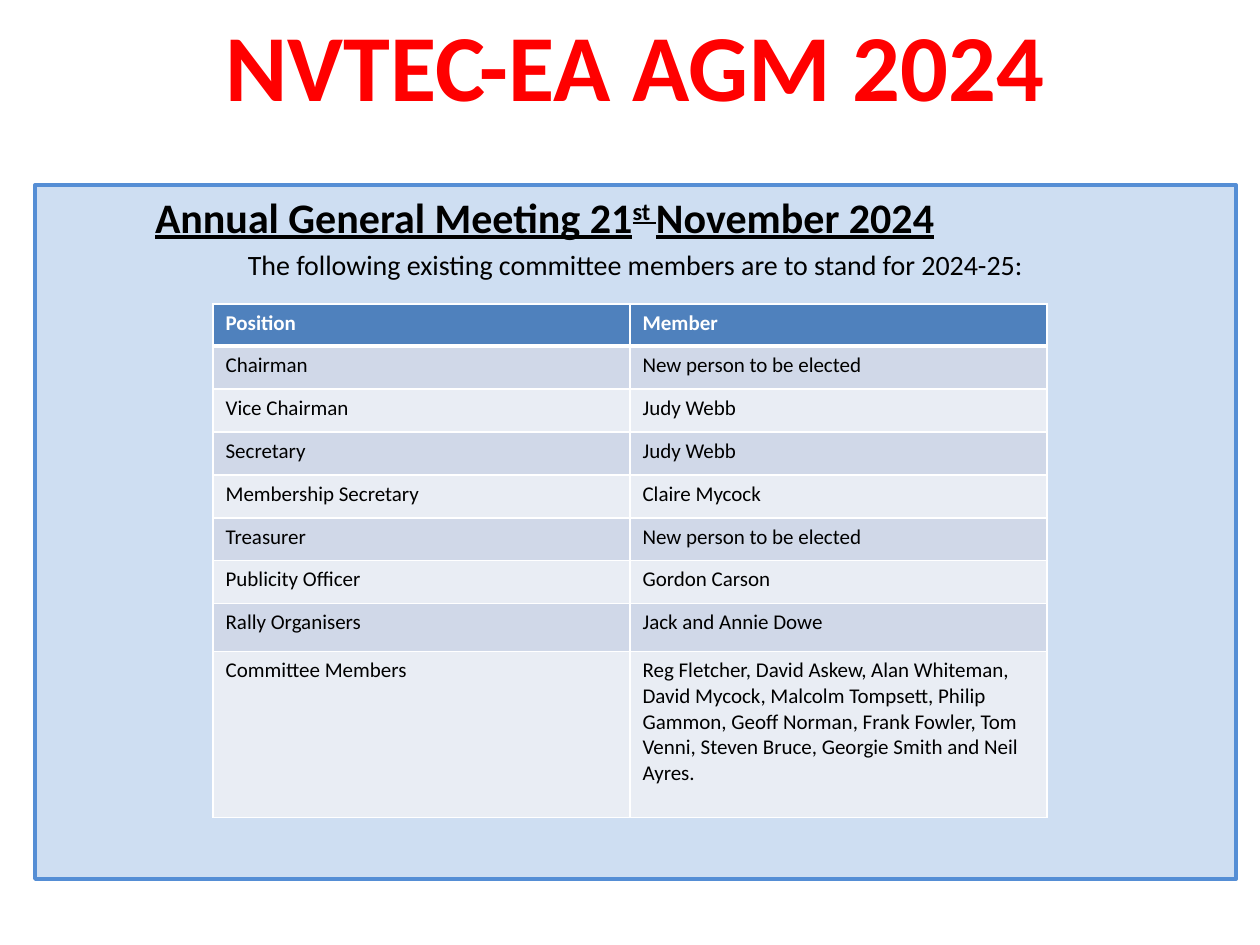
from dataclasses import dataclass
from lxml.etree import SubElement
from pptx import Presentation
from pptx.dml.color import RGBColor
from pptx.enum.shapes import MSO_SHAPE
from pptx.enum.text import MSO_ANCHOR, PP_ALIGN
from pptx.oxml.ns import qn
from pptx.util import Emu, Pt

SCALE = 914400 / 126
BLUE, BAND, PALE, WHITE = "4F81BD", "D0D8E8", "E9EDF4", "FFFFFF"
HEAD = {"size": Pt(24), "bold": True, "underline": True}


@dataclass
class Box:
    left: int
    top: int
    width: int
    height: int

    def emu(self) -> list[Emu]:
        return [px(n) for n in (self.left, self.top, self.width, self.height)]


@dataclass
class Post:
    role: str
    member: str
    height: int = 43


POSTS = [
    Post("Position", "Member", 42),
    Post("Chairman", "New person to be elected"),
    Post("Vice Chairman", "Judy Webb"),
    Post("Secretary", "Judy Webb"),
    Post("Membership Secretary", "Claire Mycock"),
    Post("Treasurer", "New person to be elected"),
    Post("Publicity Officer", "Gordon Carson"),
    Post("Rally Organisers", "Jack and Annie Dowe", 48),
    Post("Committee Members", "Reg Fletcher, David Askew, Alan Whiteman, "
         "David Mycock, Malcolm Tompsett, Philip Gammon, Geoff Norman, "
         "Frank Fowler, Tom Venni, Steven Bruce, Georgie Smith and Neil "
         "Ayres.", 166),
]


def px(n: int) -> Emu:
    return Emu(round(n * SCALE))


def rgb(code: str) -> RGBColor:
    return RGBColor.from_string(code)


def assign(item, values: dict) -> None:
    for name, value in values.items():
        setattr(item, name, value)


def write(para, text: str, style: dict, color: str = "000000"):
    run = para.add_run()
    run.text = text
    assign(run.font, {"name": "Calibri", **style})
    run.font.color.rgb = rgb(color)
    return run


def title(slide) -> None:
    frame = slide.shapes.add_textbox(*Box(134, 5, 1002, 117).emu()).text_frame
    assign(frame, {"word_wrap": True, "vertical_anchor": MSO_ANCHOR.MIDDLE})
    para = frame.paragraphs[0]
    para.alignment = PP_ALIGN.CENTER
    write(para, "NVTEC-EA AGM 2024", {"size": Pt(54), "bold": True}, "FF0000")


def panel(slide) -> None:
    shape = slide.shapes.add_shape(MSO_SHAPE.RECTANGLE,
                                   *Box(35, 185, 1201, 694).emu())
    shape.shadow.inherit = False
    shape.fill.solid()
    shape.fill.fore_color.rgb = rgb("C6D9F1")
    tint = shape.fill._xPr.find(qn("a:solidFill"))[0]
    SubElement(tint, qn("a:alpha"), val="86000")
    shape.line.color.rgb = rgb("558ED5")
    shape.line.width = Pt(2.25)
    frame = shape.text_frame
    assign(frame, {"word_wrap": True, "vertical_anchor": MSO_ANCHOR.TOP,
                   "margin_left": px(120), "margin_right": px(120)})

    head = frame.paragraphs[0]
    head.alignment = PP_ALIGN.LEFT
    tabs = SubElement(head._p.get_or_add_pPr(), qn("a:tabLst"))
    SubElement(tabs, qn("a:tab"), pos=str(px(960)), algn="l")
    write(head, "Annual General Meeting 21", HEAD)
    raised = write(head, "st ", HEAD)
    raised.font._element.set("baseline", "30000")
    write(head, "November 2024\t", HEAD)

    note = frame.add_paragraph()
    assign(note, {"alignment": PP_ALIGN.CENTER, "space_before": Pt(3.2)})
    write(note, "The following existing committee members are to stand "
          "for 2024-25:", {"size": Pt(16)})


def edge(cell, sides: dict[str, int]) -> None:
    """Draw white cell borders, with widths in points by side."""
    props = cell._tc.get_or_add_tcPr()
    for spot, (side, width) in enumerate(sides.items()):
        line = props.makeelement(qn(f"a:ln{side}"), {"w": str(Pt(width))})
        fill = SubElement(line, qn("a:solidFill"))
        SubElement(fill, qn("a:srgbClr"), val=WHITE)
        props.insert(spot, line)


def roster(slide) -> None:
    box = Box(213, 304, 834, sum(post.height for post in POSTS))
    table = slide.shapes.add_table(len(POSTS), 2, *box.emu()).table
    for col in table.columns:
        col.width = px(box.width // 2)
    for row, post in enumerate(POSTS):
        table.rows[row].height = px(post.height)
        first = row == 0
        shade = BLUE if first else BAND if row % 2 else PALE
        for col, text in enumerate((post.role, post.member)):
            cell = table.cell(row, col)
            cell.fill.solid()
            cell.fill.fore_color.rgb = rgb(shade)
            edge(cell, {"L": 1, "R": 1, "T": 3 if row == 1 else 1,
                        "B": 3 if first else 1})
            write(cell.text_frame.paragraphs[0], text,
                  {"size": Pt(12), "bold": first},
                  WHITE if first else "000000")


def main() -> None:
    deck = Presentation()
    assign(deck, {"slide_width": px(1260), "slide_height": px(945)})
    slide = deck.slides.add_slide(deck.slide_layouts[6])
    title(slide)
    panel(slide)
    roster(slide)
    deck.save("out.pptx")


if __name__ == "__main__":
    main()
